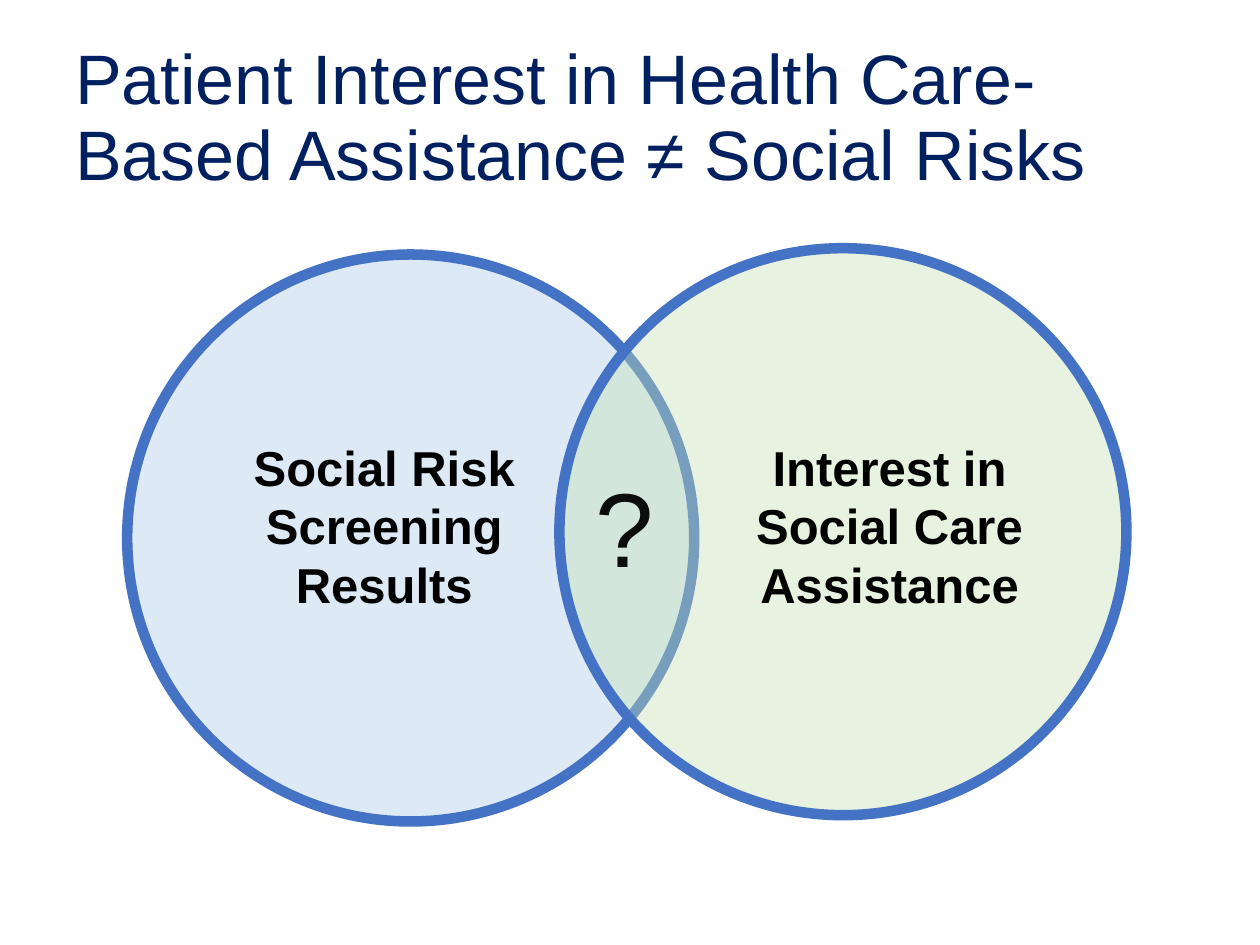
"""Build a Venn slide on social risks and interest in assistance."""
import dataclasses

import lxml.etree
import pptx
import pptx.dml.color
import pptx.enum.shapes
import pptx.enum.text
import pptx.oxml.ns
import pptx.util

Inches = pptx.util.Inches
Align = pptx.enum.text.PP_ALIGN
Anchor = pptx.enum.text.MSO_ANCHOR


@dataclasses.dataclass(frozen=True)
class Theme:
    font: str = "Arial"
    title: str = "002060"
    label: str = "000000"
    question: str = "0D0D0D"
    ring: str = "4472C4"
    risk: str = "BDD7EE"
    interest: str = "C5E0B4"
    title_size: int = 40
    label_size: int = 28
    question_size: int = 60
    ring_width: int = 6


class VennSlide:
    def __init__(self, slide, theme):
        self.slide = slide
        self.theme = theme

    def circle(self, left, top, diameter, color, opacity):
        circle = self.slide.shapes.add_shape(
            pptx.enum.shapes.MSO_SHAPE.FLOWCHART_CONNECTOR,
            Inches(left), Inches(top), Inches(diameter), Inches(diameter))
        circle.shadow.inherit = False
        circle.fill.solid()
        circle.fill.fore_color.rgb = pptx.dml.color.RGBColor.from_string(color)
        tint = circle.fill._xPr.find(".//" + pptx.oxml.ns.qn("a:srgbClr"))
        lxml.etree.SubElement(
            tint, pptx.oxml.ns.qn("a:alpha"), val=str(opacity * 1000))
        circle.line.color.rgb = pptx.dml.color.RGBColor.from_string(self.theme.ring)
        circle.line.width = pptx.util.Pt(self.theme.ring_width)

    def text(self, wording, box, size, color, bold=False, align=Align.LEFT,
             anchor=Anchor.TOP, spacing=None):
        frame = self.slide.shapes.add_textbox(*map(Inches, box)).text_frame
        frame.word_wrap = True
        frame.vertical_anchor = anchor
        paragraph = frame.paragraphs[0]
        paragraph.alignment = align
        paragraph.line_spacing = spacing
        run = paragraph.add_run()
        run.text = wording
        run.font.name = self.theme.font
        run.font.size = pptx.util.Pt(size)
        run.font.bold = bold
        run.font.color.rgb = pptx.dml.color.RGBColor.from_string(color)

    def title(self, wording, box):
        self.text(wording, box, self.theme.title_size, self.theme.title,
                  anchor=Anchor.BOTTOM, spacing=0.9)

    def label(self, wording, box):
        self.text(wording, box, self.theme.label_size, self.theme.label,
                  bold=True, align=Align.CENTER)

    def question(self, wording, box):
        self.text(wording, box, self.theme.question_size, self.theme.question)


def main():
    deck = pptx.Presentation()
    deck.slide_width, deck.slide_height = Inches(10), Inches(7.5)
    theme = Theme()
    venn = VennSlide(deck.slides.add_slide(deck.slide_layouts[6]), theme)

    venn.title("Patient Interest in Health Care-Based Assistance ≠ Social Risks",
               (0.5, 0.93, 9.14, 0.67))
    diameter = 4.5
    venn.circle(1.01, 2.02, diameter, theme.risk, 50)
    venn.circle(4.44, 1.97, diameter, theme.interest, 40)
    venn.label("Social Risk Screening Results", (1.53, 3.42, 3.04, 1.51))
    venn.label("Interest in Social Care Assistance", (5.68, 3.42, 2.76, 1.51))
    venn.question("?", (4.63, 3.62, 0.92, 1.11))
    deck.save("out.pptx")


if __name__ == "__main__":
    main()
